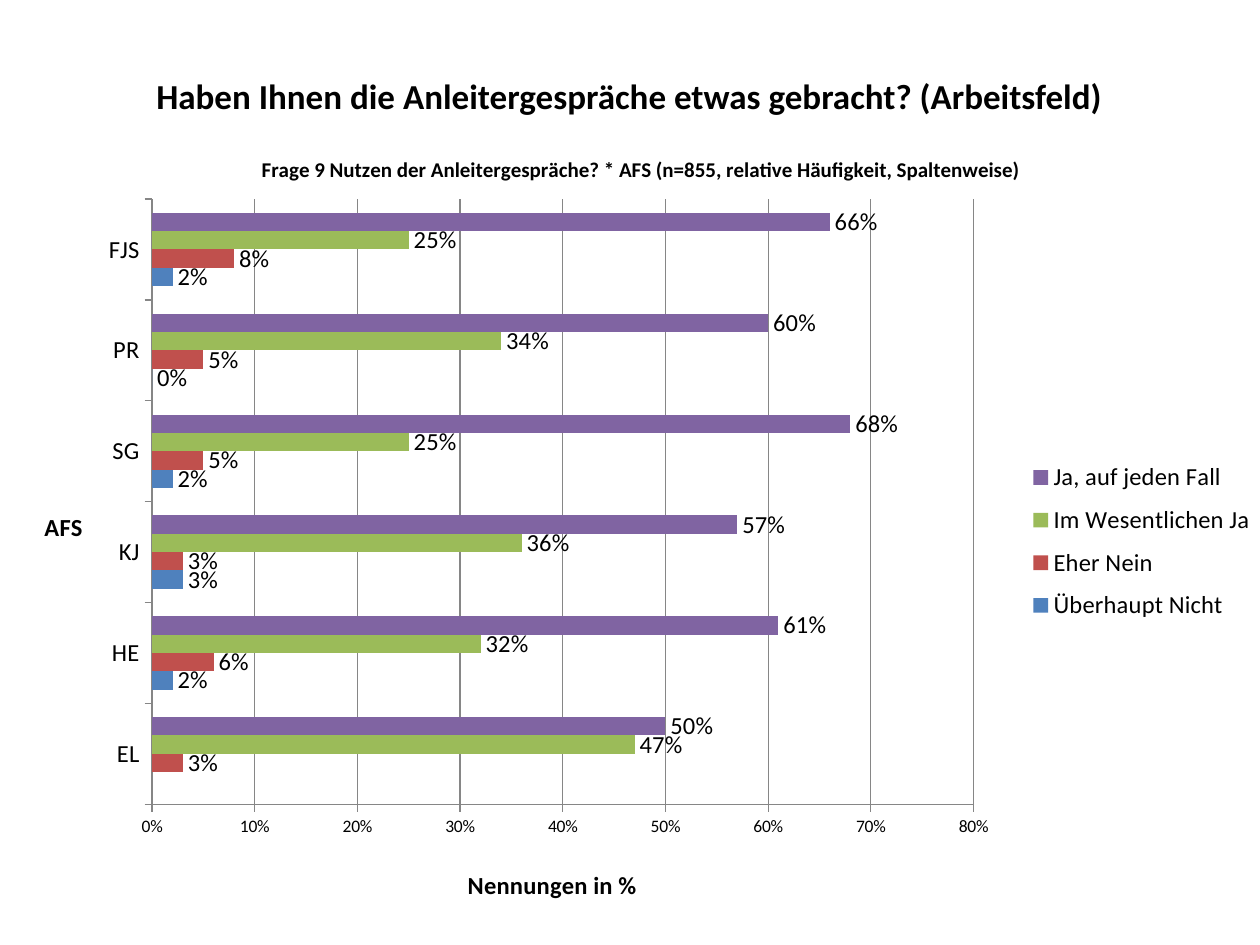
import dataclasses
import typing

import lxml.etree
import pptx
import pptx.chart.data
import pptx.dml.color
import pptx.enum.chart
import pptx.enum.text
import pptx.oxml.ns
import pptx.util

FONT = "Calibri"
COLORS = {
    "text": "000000",
    "grid": "868686",
    "blue": "4F81BD",
    "red": "C0504D",
    "green": "9BBB59",
    "purple": "8064A2",
}
qn = pptx.oxml.ns.qn


class Box(typing.NamedTuple):
    """Left, top, width and height as shares of the containing area."""
    x: float
    y: float
    w: float | None = None
    h: float | None = None


@dataclasses.dataclass
class Answer:
    name: str
    color: str
    values: tuple[float | None, ...]


FIELDS = ("EL", "HE", "KJ", "SG", "PR", "FJS")
ANSWERS = (
    Answer("Überhaupt Nicht", "blue", (None, 0.02, 0.03, 0.02, 0, 0.02)),
    Answer("Eher Nein", "red", (0.03, 0.06, 0.03, 0.05, 0.05, 0.08)),
    Answer("Im Wesentlichen Ja", "green", (0.47, 0.32, 0.36, 0.25, 0.34, 0.25)),
    Answer("Ja, auf jeden Fall", "purple", (0.5, 0.61, 0.57, 0.68, 0.6, 0.66)),
)


def rgb(name: str) -> pptx.dml.color.RGBColor:
    return pptx.dml.color.RGBColor.from_string(COLORS[name])


def set_font(font, size: float, bold: bool = False) -> None:
    font.name = FONT
    font.size = pptx.util.Pt(size)
    font.bold = bold
    font.color.rgb = rgb("text")


def write(tf, text: str, *, size: float, bold: bool = True, align=None) -> None:
    p = tf.paragraphs[0]
    p.alignment = align
    r = p.add_run()
    r.text = text
    set_font(r.font, size, bold)


def set_layout(element, box: Box, inner: bool = False) -> None:
    """Place a chart part by shares of the chart's size."""
    for old in element.findall(qn("c:layout")):
        element.remove(old)
    layout = lxml.etree.Element(qn("c:layout"))
    manual = lxml.etree.SubElement(layout, qn("c:manualLayout"))
    settings = [("layoutTarget", "inner")] if inner else []
    settings += [("xMode", "edge"), ("yMode", "edge")]
    settings += [(k, v) for k, v in box._asdict().items() if v is not None]
    for tag, value in settings:
        lxml.etree.SubElement(manual, qn(f"c:{tag}")).set("val", str(value))
    leading = (qn("c:tx"), qn("c:legendPos"))
    element.insert(sum(child.tag in leading for child in element), layout)


def format_axis(axis, title: str, box: Box, size: float) -> None:
    axis.major_tick_mark = pptx.enum.chart.XL_TICK_MARK.OUTSIDE
    axis.minor_tick_mark = pptx.enum.chart.XL_TICK_MARK.NONE
    axis.format.line.color.rgb = rgb("grid")
    axis.format.line.width = pptx.util.Pt(0.75)
    set_font(axis.tick_labels.font, size)
    write(axis.axis_title.text_frame, title, size=14)
    element = axis.axis_title._element
    for body in element.iter(qn("a:bodyPr")):
        body.set("rot", "0")
        body.set("vert", "horz")
    set_layout(element, box)


def format_series(series, answer: Answer) -> None:
    series.format.fill.solid()
    series.format.fill.fore_color.rgb = rgb(answer.color)
    series.invert_if_negative = False
    labels = series.data_labels
    labels.show_value = True
    labels.number_format = "0%"
    labels.number_format_is_linked = False
    labels.position = pptx.enum.chart.XL_LABEL_POSITION.OUTSIDE_END
    set_font(labels.font, 14)


def add_answer_chart(s, left: float, top: float, width: float, height: float) -> None:
    data = pptx.chart.data.CategoryChartData(number_format="0%")
    data.categories = FIELDS
    for answer in ANSWERS:
        data.add_series(answer.name, answer.values)
    inches = pptx.util.Inches
    chart = s.shapes.add_chart(
        pptx.enum.chart.XL_CHART_TYPE.BAR_CLUSTERED,
        inches(left), inches(top), inches(width), inches(height), data).chart
    set_font(chart.font, 10)

    # Bars
    plot = chart.plots[0]
    plot.gap_width = 150
    plot.vary_by_categories = False
    for series, answer in zip(plot.series, ANSWERS):
        format_series(series, answer)
    set_layout(chart._chartSpace.chart.plotArea, Box(0.11, 0.095, 0.66, 0.76), inner=True)

    # Chart title
    write(chart.chart_title.text_frame,
          "Frage 9 Nutzen der Anleitergespräche? * AFS "
          "(n=855, relative Häufigkeit, Spaltenweise)", size=12)
    set_layout(chart.chart_title._element, Box(0.195, 0.035))

    # Axes
    format_axis(chart.category_axis, "AFS", Box(0.02, 0.48), 14)
    axis = chart.value_axis
    format_axis(axis, "Nennungen in %", Box(0.36, 0.93), 10)
    axis.minimum_scale, axis.maximum_scale, axis.major_unit = 0, 0.8, 0.1
    axis.tick_labels.number_format = "0%"
    axis.tick_labels.number_format_is_linked = False
    axis.has_major_gridlines = True
    axis.major_gridlines.format.line.color.rgb = rgb("grid")
    axis.major_gridlines.format.line.width = pptx.util.Pt(0.75)

    # Legend
    chart.has_legend = True
    chart.legend.position = pptx.enum.chart.XL_LEGEND_POSITION.RIGHT
    chart.legend.include_in_layout = False
    set_font(chart.legend.font, 14)
    set_layout(chart.legend._element, Box(0.81, 0.41, 0.19, 0.23))


def main() -> None:
    prs = pptx.Presentation()
    prs.slide_width = pptx.util.Inches(10)
    prs.slide_height = pptx.util.Inches(7.5)
    s = prs.slides.add_slide(prs.slide_layouts[5])

    # Slide title
    sp = s.shapes.title
    sp.left, sp.top = pptx.util.Inches(1.14), pptx.util.Inches(0.54)
    sp.width, sp.height = pptx.util.Inches(8.66), pptx.util.Inches(0.44)
    tf = sp.text_frame
    tf.word_wrap = True
    tf.auto_size = pptx.enum.text.MSO_AUTO_SIZE.SHAPE_TO_FIT_TEXT
    tf.vertical_anchor = pptx.enum.text.MSO_ANCHOR.TOP
    write(tf, "Haben Ihnen die Anleitergespräche etwas gebracht? (Arbeitsfeld)",
          size=20, align=pptx.enum.text.PP_ALIGN.LEFT)

    add_answer_chart(s, 0.12, 0.98, 9.88, 6.32)
    prs.save("out.pptx")


if __name__ == "__main__":
    main()
